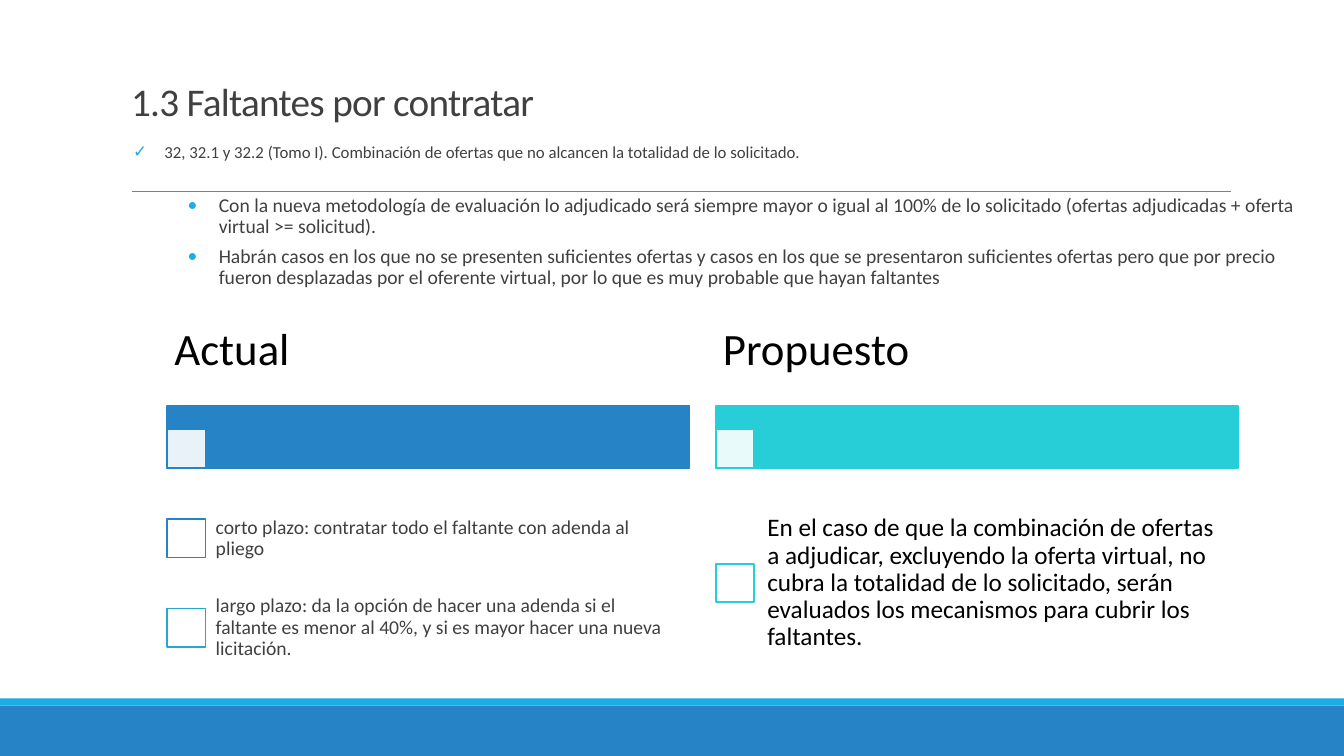
"""Build the slide comparing the current and proposed handling of contract shortfalls."""
from dataclasses import dataclass

from lxml import etree
from pptx import Presentation
from pptx.dml.color import RGBColor
from pptx.enum.shapes import MSO_CONNECTOR, MSO_SHAPE
from pptx.enum.text import MSO_ANCHOR, MSO_AUTO_SIZE, PP_ALIGN
from pptx.oxml.ns import qn
from pptx.util import Inches, Pt

RECTANGLE = MSO_SHAPE.RECTANGLE
STRAIGHT = MSO_CONNECTOR.STRAIGHT
MIDDLE, BOTTOM, TOP = MSO_ANCHOR.MIDDLE, MSO_ANCHOR.BOTTOM, MSO_ANCHOR.TOP
LEFT = PP_ALIGN.LEFT
NO_AUTOFIT = MSO_AUTO_SIZE.NONE


@dataclass(frozen=True)
class Theme:
    """Colours and type sizes of the slide."""
    font: str = "Calibri"
    white: str = "FFFFFF"
    black: str = "000000"
    ink: str = "404040"
    rule: str = "808080"
    accent: str = "1CADE4"
    blue: str = "2683C6"
    mid_blue: str = "27A7CE"
    turquoise: str = "27CED7"
    title: int = 28
    heading: int = 32
    large: int = 18
    body: int = 14
    reference: int = 12


THEME = Theme()

TITLE = "1.3 Faltantes por contratar"
REFERENCE = ("32, 32.1 y 32.2 (Tomo I). Combinación de ofertas que no alcancen "
             "la totalidad de lo solicitado.")
POINTS = [
    "Con la nueva metodología de evaluación lo adjudicado será siempre mayor o igual "
    "al 100% de lo solicitado (ofertas adjudicadas + oferta virtual >= solicitud).",
    "Habrán casos en los que no se presenten suficientes ofertas y casos en los que se "
    "presentaron suficientes ofertas pero que por precio fueron desplazadas por el "
    "oferente virtual, por lo que es muy probable que hayan faltantes",
]
COLUMNS = [
    {"heading": "Actual", "color": THEME.blue, "size": THEME.body,
     "ink": THEME.ink, "inset": 0.11,
     "options": [
         ("corto plazo: contratar todo el faltante con adenda al pliego", THEME.blue),
         ("largo plazo: da la opción de hacer una adenda si el faltante es menor al 40%, "
          "y si es mayor hacer una nueva licitación.", THEME.mid_blue)]},
    {"heading": "Propuesto", "color": THEME.turquoise, "size": THEME.large,
     "ink": THEME.black, "inset": 0.14,
     "options": [
         ("En el caso de que la combinación de ofertas a adjudicar, excluyendo la oferta "
          "virtual, no cubra la totalidad de lo solicitado, serán evaluados los "
          "mecanismos para cubrir los faltantes.", THEME.turquoise)]},
]

SLIDE_WIDTH, SLIDE_HEIGHT = 13.33, 7.5
COLUMN_LEFT, COLUMN_PITCH, COLUMN_WIDTH = 1.66, 5.44, 5.18
HEADING_TOP, HEADING_HEIGHT = 2.94, 1.09
BAR_TOP, BAR_HEIGHT = 4.03, 0.61
BOX = 0.38
OPTION_INDENT = 0.37
OPTIONS_TOP, OPTIONS_HEIGHT = 4.9, 1.77


def color(value):
    return RGBColor.from_string(value)


def add_rectangle(slide, left, top, width, height, fill, outline=None, opacity=None):
    rectangle = slide.shapes.add_shape(
        RECTANGLE, Inches(left), Inches(top), Inches(width), Inches(height))
    rectangle.shadow.inherit = False
    rectangle.fill.solid()
    rectangle.fill.fore_color.rgb = color(fill)
    if opacity:
        tint = rectangle.fill._xPr.find(qn("a:solidFill"))[0]
        etree.SubElement(tint, qn("a:alpha"), val=str(opacity * 1000))
    if outline:
        rectangle.line.color.rgb = color(outline)
        rectangle.line.width = Pt(1.25)
    else:
        rectangle.line.fill.background()


def write(holder, paragraphs, size, ink, insets=(0.1, 0.05), anchor=TOP,
          line_spacing=0.9, bullet=None):
    frame = holder.text_frame
    frame.word_wrap = True
    frame.auto_size = NO_AUTOFIT
    frame.vertical_anchor = anchor
    frame.margin_left = frame.margin_right = Inches(insets[0])
    frame.margin_top = frame.margin_bottom = Inches(insets[1])
    frame.text = "\n".join(paragraphs)
    for paragraph in frame.paragraphs:
        paragraph.alignment = LEFT
        paragraph.line_spacing = line_spacing
        if bullet:
            add_bullet(paragraph, *bullet)
        for run in paragraph.runs:
            run.font.name = THEME.font
            run.font.size = Pt(size)
            run.font.color.rgb = color(ink)


def add_bullet(paragraph, symbol, level, indent):
    paragraph.level = level
    paragraph.space_before, paragraph.space_after = Pt(2), Pt(4)
    properties = paragraph._p.get_or_add_pPr()
    properties.set("marL", str(Inches(indent)))
    properties.set("indent", str(Inches(-0.31)))
    bullet_color = etree.SubElement(properties, qn("a:buClr"))
    etree.SubElement(bullet_color, qn("a:srgbClr"), val=THEME.accent)
    etree.SubElement(properties, qn("a:buFont"), typeface=THEME.font)
    etree.SubElement(properties, qn("a:buChar"), char=symbol)


def place(holder, left, top, width, height):
    holder.left, holder.top = Inches(left), Inches(top)
    holder.width, holder.height = Inches(width), Inches(height)


def add_text(slide, left, top, width, height, text, *style, **options):
    box = slide.shapes.add_textbox(
        Inches(left), Inches(top), Inches(width), Inches(height))
    write(box, [text], *style, **options)


def add_frame(slide):
    add_rectangle(slide, 0, 7, SLIDE_WIDTH, 0.5, THEME.blue)
    add_rectangle(slide, 0, 6.93, SLIDE_WIDTH, 0.07, THEME.accent)
    rule = slide.shapes.add_connector(
        STRAIGHT, Inches(1.31), Inches(1.9), Inches(12.21), Inches(1.9))
    rule.line.color.rgb = color(THEME.rule)
    rule.line.width = Pt(0.5)
    etree.SubElement(rule._element.spPr, qn("a:effectLst"))


def add_introduction(slide):
    title, points = slide.shapes.title, slide.placeholders[1]
    place(title, 1.2, 0.61, 6.48, 0.68)
    write(title, [TITLE], THEME.title, THEME.ink, anchor=BOTTOM, line_spacing=0.85)
    title.text_frame.paragraphs[0].runs[0].font._element.set("spc", "-50")
    place(points, 0.86, 1.89, 11.99, 1.1)
    write(points, POINTS, THEME.body, THEME.ink, (0, 0.05), bullet=("•", 2, 1.31))
    add_text(slide, 0.82, 1.38, 11.99, 0.5, REFERENCE, THEME.reference, THEME.ink,
             insets=(0, 0.05), bullet=("✓", 1, 0.81))


def add_column(slide, left, column):
    accent, options = column["color"], column["options"]
    add_rectangle(slide, left, BAR_TOP, COLUMN_WIDTH, BAR_HEIGHT, accent, accent)
    add_rectangle(slide, left, BAR_TOP + BAR_HEIGHT - BOX, BOX, BOX,
                  THEME.white, accent, opacity=90)
    add_text(slide, left, HEADING_TOP, COLUMN_WIDTH, HEADING_HEIGHT, column["heading"],
             THEME.heading, THEME.black, insets=(0.07, 0.04), anchor=MIDDLE)
    row_height = OPTIONS_HEIGHT / len(options)
    for row, (option, outline) in enumerate(options):
        top = OPTIONS_TOP + row * row_height
        add_rectangle(slide, left, top + (row_height - BOX) / 2, BOX, BOX,
                      THEME.white, outline)
        add_text(slide, left + OPTION_INDENT, top, COLUMN_WIDTH - OPTION_INDENT,
                 row_height, option, column["size"], column["ink"],
                 insets=(column["inset"], column["inset"]), anchor=MIDDLE)


def main():
    deck = Presentation()
    deck.slide_width, deck.slide_height = Inches(SLIDE_WIDTH), Inches(SLIDE_HEIGHT)
    slide = deck.slides.add_slide(deck.slide_layouts[1])
    add_frame(slide)
    add_introduction(slide)
    for index, column in enumerate(COLUMNS):
        add_column(slide, COLUMN_LEFT + index * COLUMN_PITCH, column)
    deck.save("out.pptx")


if __name__ == "__main__":
    main()
